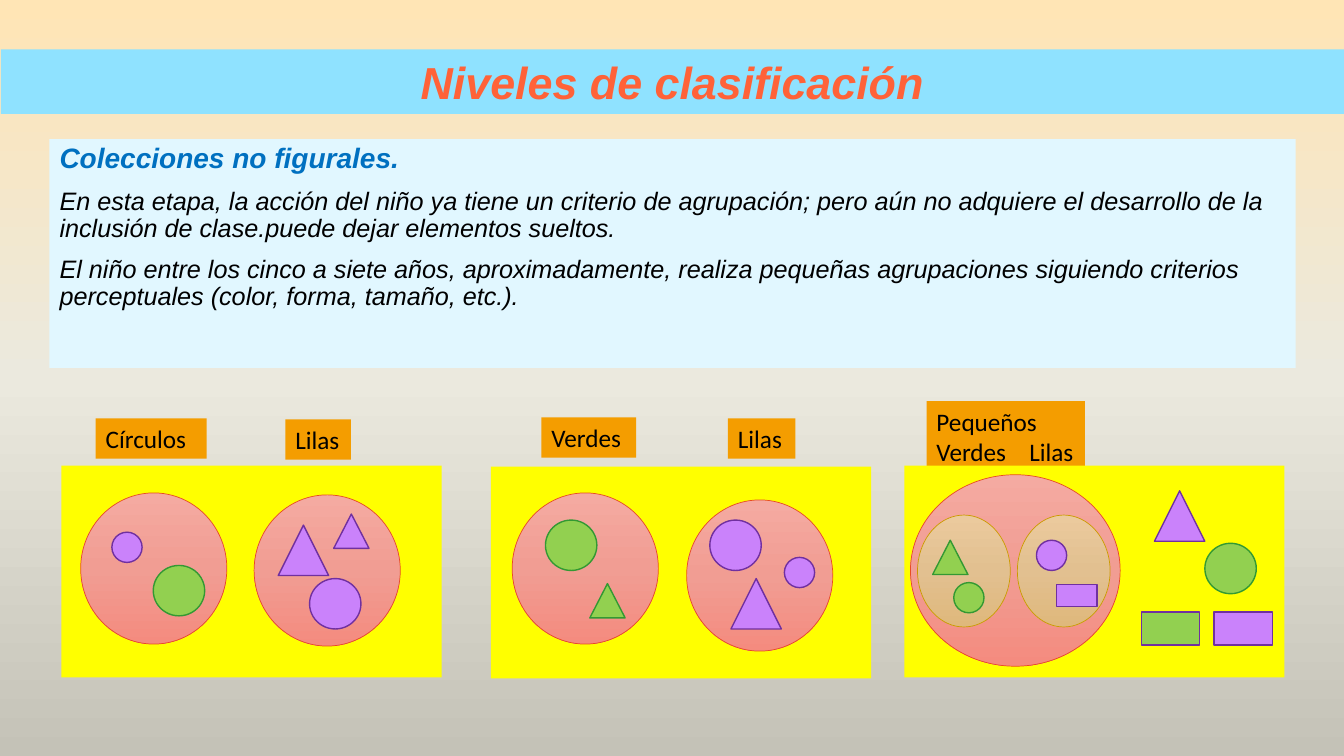
from copy import deepcopy

from pptx import Presentation
from pptx import util as u
from pptx.dml import color as col
from pptx.enum import shapes, text
from pptx.oxml import ns, xmlchemy as xml

MSO = shapes.MSO_SHAPE
KINDS = {
    "ring": (MSO.FLOWCHART_CONNECTOR, 1.45, 1.5),
    "hoop": (MSO.FLOWCHART_CONNECTOR, 2.08, 1.9),
    "oval": (MSO.FLOWCHART_CONNECTOR, 0.92, 1.11),
    "disc": (MSO.FLOWCHART_CONNECTOR, 0.51, 0.5),
    "dot": (MSO.FLOWCHART_CONNECTOR, 0.3, 0.3),
    "cone": (MSO.ISOSCELES_TRIANGLE, 0.5, 0.5),
    "peak": (MSO.ISOSCELES_TRIANGLE, 0.35, 0.34),
    "bar": (MSO.RECTANGLE, 0.58, 0.33),
    "chip": (MSO.RECTANGLE, 0.4, 0.22),
}
TONES = {
    "pink": (("F4AAA1", "F19D93", "F48B7F"), "E84C22", 0.5),
    "sand": (("EBCA9D", "E2C090", "DFB87C"), "CC9900", 0.5),
    "green": ("92D050", "339933", 1),
    "leaf": ("92D050", "7030A0", 1),
    "lilac": ("CA82FB", "7030A0", 1),
}
PANELS = [
    (0.61, 4.62,
     [("Círculos", 0.34, -0.47, 1.1, 0.4), ("Lilas", 2.22, -0.46, 0.65, 0.4)],
     [("ring", "pink", 0.19, 0.27), ("dot", "lilac", 0.5, 0.66),
      ("disc", "green", 0.91, 0.99), ("ring", "pink", 1.91, 0.29),
      ("peak", "lilac", 2.7, 0.48), ("cone", "lilac", 2.15, 0.59),
      ("disc", "lilac", 2.46, 1.12)]),
    (4.87, 4.63,
     [("Verdes", 0.5, -0.49, 0.94, 0.4), ("Lilas", 2.35, -0.48, 0.67, 0.4)],
     [("ring", "pink", 0.21, 0.26), ("ring", "pink", 1.94, 0.33),
      ("disc", "lilac", 2.17, 0.53), ("cone", "lilac", 2.38, 1.11),
      ("dot", "lilac", 2.91, 0.9), ("disc", "green", 0.54, 0.53),
      ("peak", "green", 0.98, 1.16)]),
    (8.97, 4.62,
     [("Pequeños Verdes\tLilas", 0.22, -0.64, 1.57, 0.71)],
     [("hoop", "pink", 0.06, 0.09), ("oval", "sand", 0.13, 0.49),
      ("peak", "green", 0.28, 0.74), ("oval", "sand", 1.12, 0.49),
      ("dot", "green", 0.49, 1.16), ("dot", "lilac", 1.31, 0.74),
      ("chip", "lilac", 1.51, 1.18), ("cone", "lilac", 2.48, 0.25),
      ("disc", "green", 2.98, 0.77), ("bar", "leaf", 2.35, 1.45),
      ("bar", "lilac", 3.07, 1.45)]),
]
BODY = [
    ("Colecciones no figurales.", "0070C0", 20, True),
    ("En esta etapa, la acción del niño ya tiene un criterio de agrupación; "
     "pero aún no adquiere el desarrollo de la inclusión de clase.puede dejar "
     "elementos sueltos.", "000000", 18, False),
    ("El niño entre los cinco a siete años, aproximadamente, realiza pequeñas "
     "agrupaciones siguiendo criterios perceptuales (color, forma, tamaño, "
     "etc.).", "000000", 18, False),
]


def rgb(code):
    return col.RGBColor.from_string(code)


def put(obj, vals):
    for key, val in vals.items():
        setattr(obj, key, val)


def place(shape, box):
    put(shape, dict(zip(("left", "top", "width", "height"), map(u.Inches, box))))


def paint(fill, code):
    fill.solid()
    fill.fore_color.rgb = rgb(code)


def blend(fill, root, codes):
    fill.gradient()
    fill.gradient_angle = 270
    stops = root.find(".//" + ns.qn("a:gsLst"))
    stops.insert(1, deepcopy(stops[0]))
    for i, (stop, code) in enumerate(zip(fill.gradient_stops, codes)):
        stop.color.rgb = rgb(code)
        stop.position = i / 2


def write(para, words, code, vals):
    run = para.add_run()
    run.text = words
    put(run.font, vals)
    run.font.color.rgb = rgb(code)


def frame(shape, anchor):
    put(shape.text_frame, {"word_wrap": True, "vertical_anchor": anchor,
                           "auto_size": text.MSO_AUTO_SIZE.NONE})
    return shape.text_frame


def draw(slide, preset, box, code, line=None, width=0):
    shape = slide.shapes.add_shape(preset, *map(u.Inches, box))
    shape.shadow.inherit = False
    if isinstance(code, tuple):
        blend(shape.fill, shape._element, code)
    else:
        paint(shape.fill, code)
    if line:
        paint(shape.line.fill, line)
        shape.line.width = u.Pt(width)
    else:
        shape.line.fill.background()
    return shape


def label(slide, words, box):
    shape = draw(slide, MSO.RECTANGLE, box, "F49D00")
    para = frame(shape, text.MSO_ANCHOR.TOP).paragraphs[0]
    para.alignment = text.PP_ALIGN.LEFT
    write(para, words, "000000", {"name": "Calibri", "size": u.Pt(18)})
    if "\t" in words:
        tabs = xml.OxmlElement("a:tabLst")
        tab = xml.OxmlElement("a:tab")
        tab.set("pos", str(u.Inches(0.92)))
        tab.set("algn", "l")
        tabs.append(tab)
        para._p.get_or_add_pPr().append(tabs)


def panel(slide, x, y, labels, figs):
    for words, dx, dy, w, h in labels:
        label(slide, words, (x + dx, y + dy, w, h))
    draw(slide, MSO.RECTANGLE, (x, y, 3.77, 2.1), "FFFF00")
    for kind, tone, dx, dy in figs:
        preset, w, h = KINDS[kind]
        draw(slide, preset, (x + dx, y + dy, w, h), *TONES[tone])


def title(shape, box):
    place(shape, box)
    paint(shape.fill, "8FE2FF")
    para = frame(shape, text.MSO_ANCHOR.MIDDLE).paragraphs[0]
    para.alignment = text.PP_ALIGN.CENTER
    write(para, "Niveles de clasificación", "FF6238",
          {"name": "Arial", "size": u.Pt(32), "bold": True, "italic": True})


def body(shape, box):
    place(shape, box)
    paint(shape.fill, "E1F7FF")
    area = frame(shape, text.MSO_ANCHOR.TOP)
    for i, (words, code, size, bold) in enumerate(BODY):
        para = area.add_paragraph() if i else area.paragraphs[0]
        put(para, {"line_spacing": 0.9, "space_before": u.Pt(10),
                   "alignment": text.PP_ALIGN.LEFT})
        props = para._p.get_or_add_pPr()
        props.set("marL", "0")
        props.set("indent", "0")
        props.append(xml.OxmlElement("a:buNone"))
        write(para, words, code, {"name": "Arial", "size": u.Pt(size),
                                  "bold": bold, "italic": True})


def main():
    deck = Presentation()
    put(deck, {"slide_width": u.Inches(13.33), "slide_height": u.Inches(7.5)})
    slide = deck.slides.add_slide(deck.slide_layouts[1])
    blend(slide.background.fill, slide._element, ("FFE5B5", "EBE9DE", "C4C2B7"))
    title(slide.shapes.title, (0.01, 0.49, 13.32, 0.64))
    body(slide.placeholders[1], (0.49, 1.38, 12.36, 2.27))
    for spot in PANELS:
        panel(slide, *spot)
    deck.save("out.pptx")


if __name__ == "__main__":
    main()
